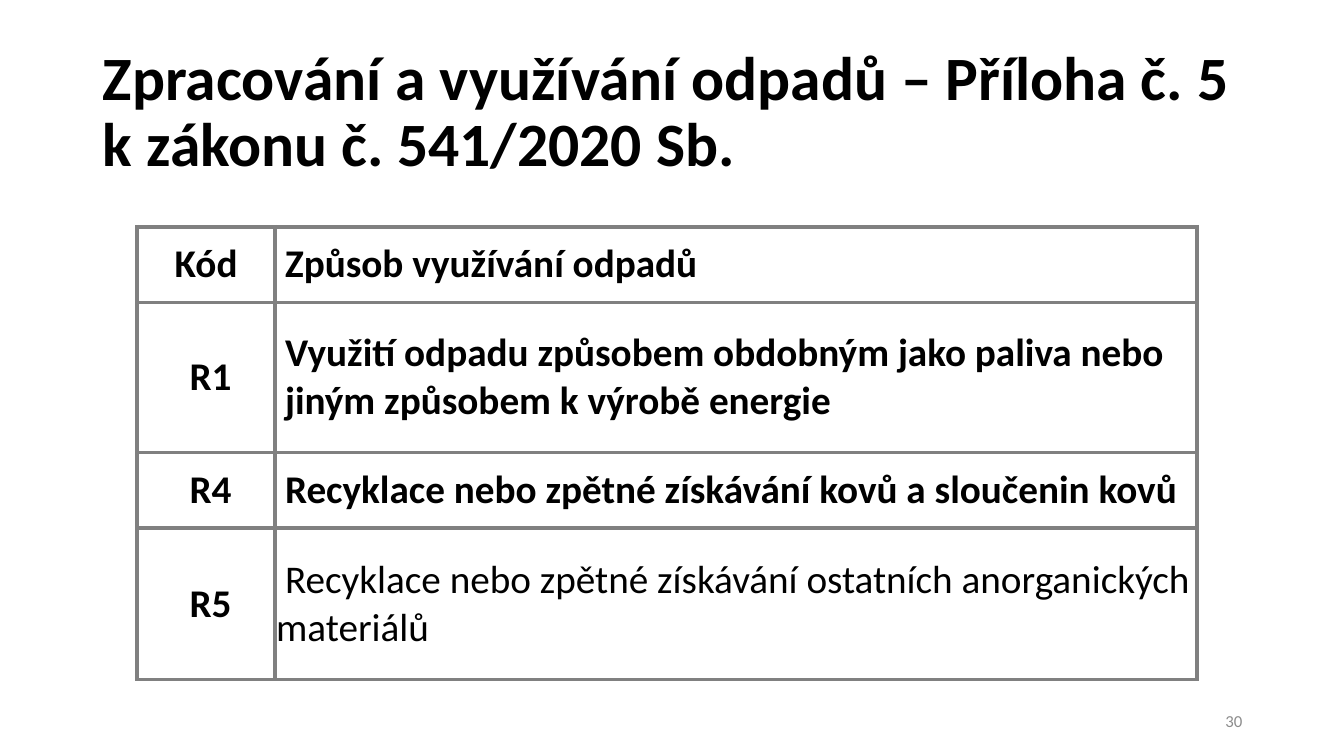
from lxml.etree import SubElement
from pptx import Presentation
from pptx.dml.color import RGBColor
from pptx.enum.text import MSO_ANCHOR, MSO_AUTO_SIZE, PP_ALIGN
from pptx.oxml.ns import qn
from pptx.util import Inches, Pt

FONT = "Calibri"
BLACK, GREY, BORDER = "000000", "8C8C8C", "808080"
TITLE = "Zpracování a využívání odpadů – Příloha č. 5 k zákonu č. 541/2020 Sb."

# Code, paragraphs of the method, bold method, row height
METHODS = [
    ("Kód", [" Způsob využívání odpadů"], True, 0.75),
    (" R1", [" Využití odpadu způsobem obdobným jako paliva nebo",
             " jiným způsobem k výrobě energie"], True, 1.49),
    (" R4", [" Recyklace nebo zpětné získávání kovů a sloučenin kovů"], True, 0.75),
    (" R5", [" Recyklace nebo zpětné získávání ostatních anorganických materiálů"],
     False, 1.5),
]


def color(value):
    return RGBColor.from_string(value)


def write(frame, paragraphs, size, ink=BLACK, bold=False, align=PP_ALIGN.LEFT):
    frame.text = "\n".join(paragraphs)
    frame.word_wrap = True
    for paragraph in frame.paragraphs:
        paragraph.alignment = align
        for run in paragraph.runs:
            run.font.name = FONT
            run.font.size = Pt(size)
            run.font.bold = bold
            run.font.color.rgb = color(ink)


def add_title(slide, left, top, width, height):
    title = slide.shapes.title
    title.left, title.top = Inches(left), Inches(top)
    title.width, title.height = Inches(width), Inches(height)
    frame = title.text_frame
    write(frame, [TITLE], 44, bold=True)
    frame.auto_size = MSO_AUTO_SIZE.NONE
    frame.vertical_anchor = MSO_ANCHOR.MIDDLE
    frame.paragraphs[0].line_spacing = 0.9


def set_borders(cell, width):
    properties = cell._tc.get_or_add_tcPr()
    for side in ("lnL", "lnR", "lnT", "lnB"):
        line = SubElement(properties, qn(f"a:{side}"), w=str(Pt(width)))
        fill = SubElement(line, qn("a:solidFill"))
        SubElement(fill, qn("a:srgbClr"), val=BORDER)


def format_cell(cell, paragraphs, bold, align):
    write(cell.text_frame, paragraphs, 28, bold=bold, align=align)
    cell.vertical_anchor = MSO_ANCHOR.MIDDLE
    cell.margin_left = cell.margin_right = Inches(0.01)
    cell.margin_top = cell.margin_bottom = 0
    set_borders(cell, 3)
    cell.fill.background()


def add_methods(slide, left, top, width, height):
    methods = slide.shapes.add_table(
        len(METHODS), 2, Inches(left), Inches(top), Inches(width), Inches(height)).table
    code_width = 1.37
    methods.columns[0].width = Inches(code_width)
    methods.columns[1].width = Inches(width - code_width)
    for row, (code, method, bold, row_height) in enumerate(METHODS):
        methods.rows[row].height = Inches(row_height)
        format_cell(methods.cell(row, 0), [code], True, PP_ALIGN.CENTER)
        format_cell(methods.cell(row, 1), method, bold, PP_ALIGN.LEFT)


def add_page_number(slide, left, top, width, height):
    page = slide.shapes.add_textbox(
        Inches(left), Inches(top), Inches(width), Inches(height))
    write(page.text_frame, ["30"], 12, GREY, align=PP_ALIGN.RIGHT)
    page.text_frame.vertical_anchor = MSO_ANCHOR.MIDDLE


def main():
    deck = Presentation()
    deck.slide_width, deck.slide_height = Inches(13.33), Inches(7.5)
    slide = deck.slides.add_slide(deck.slide_layouts.get_by_name("Title Only"))
    add_title(slide, 0.92, 0.4, 11.5, 1.45)
    add_methods(slide, 1.36, 2.25, 10.51, 4.49)
    add_page_number(slide, 9.42, 6.95, 3, 0.4)
    deck.save("out.pptx")


if __name__ == "__main__":
    main()
